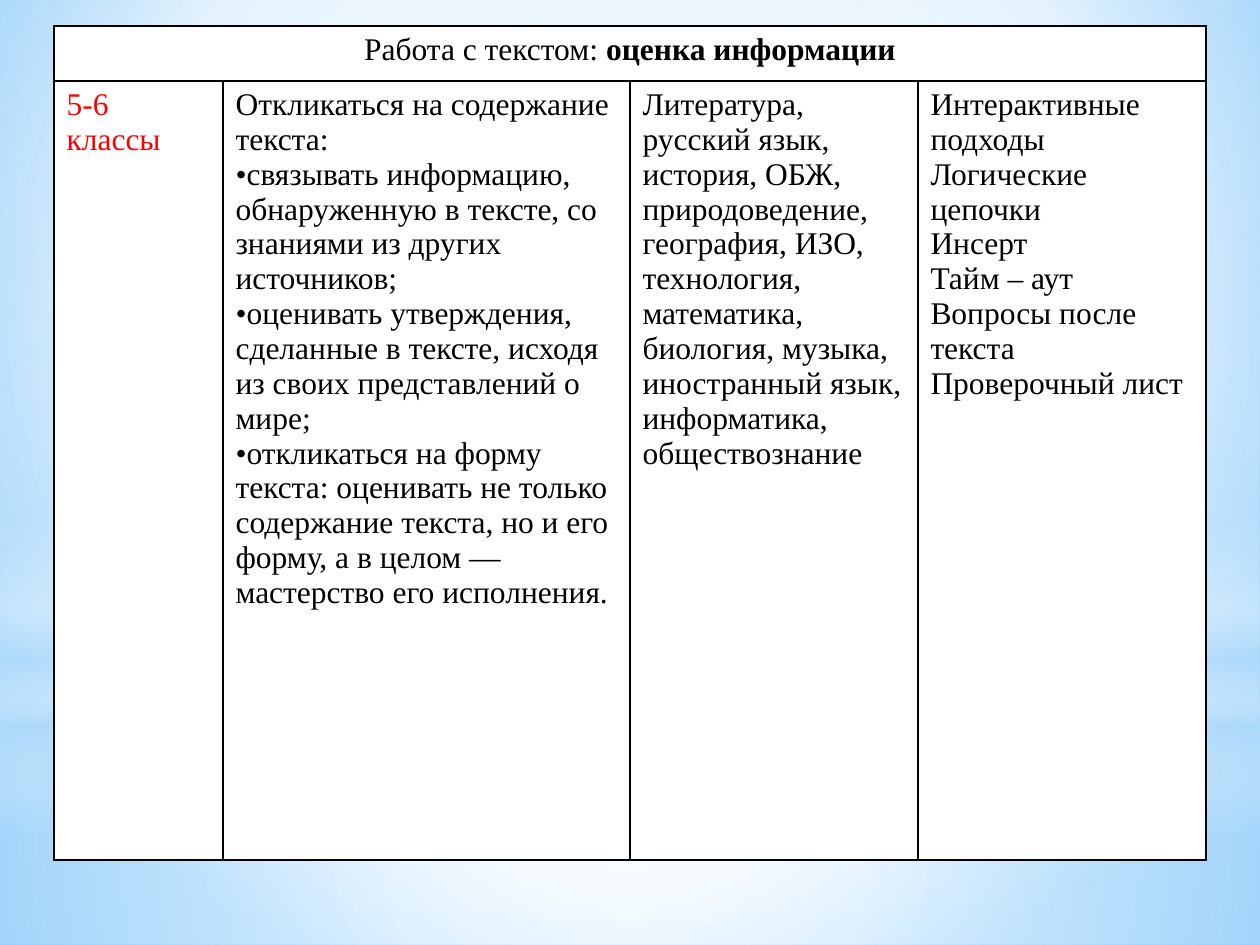
import pptx
import pptx.util
import pptx.dml.color
import pptx.enum.shapes
import pptx.enum.text
import pptx.oxml
import pptx.oxml.ns

PX = 914400 / 126
FONT = "Times New Roman"
RECT = pptx.enum.shapes.MSO_SHAPE.RECTANGLE
OVAL = pptx.enum.shapes.MSO_SHAPE.OVAL
CENTER = pptx.enum.text.PP_ALIGN.CENTER
CENTRE_FOCUS = (50, 50, 50, 50)

BACKGROUND = [(0, "9ED5FF", 100), (60, "FFFFFF", 100), (100, "5BB9FF", 100)]
GLOWS = [
    (RECT, (0, 703, 1260, 242), CENTRE_FOCUS,
     [(0, "FFFFFF", 91), (37, "FFFFFF", 76), (100, "B4DCFA", 79)]),
    (RECT, (0, 0, 1260, 703), CENTRE_FOCUS,
     [(0, "FFFFFF", 89), (48, "FFFFFF", 62), (100, "B4DCFA", 79)]),
    (RECT, (0, 519, 1260, 315), None,
     [(0, "FFFFFF", 0), (29, "FFFFFF", 30), (45, "B4DCFA", 40),
      (55, "FFFFFF", 26), (65, "B4DCFA", 60), (100, "FFFFFF", 0)]),
    (OVAL, (0, 221, 1260, 703), CENTRE_FOCUS,
     [(0, "FFFFFF", 100), (56, "FFFFFF", 0)]),
]

COLUMNS = [169, 407, 288, 288]
ROWS = [55, 779]
GRADE = ["5-6 классы"]
SKILLS = [
    "Откликаться на содержание текста:",
    "•связывать информацию, обнаруженную в тексте, со знаниями из других источников;",
    "•оценивать утверждения, сделанные в тексте, исходя из своих представлений о мире;",
    "•откликаться на форму текста: оценивать не только содержание текста, "
    "но и его форму, а в целом — мастерство его исполнения.",
]
SUBJECTS = [
    "Литература, русский язык, история, ОБЖ, природоведение, география, ИЗО, "
    "технология, математика, биология, музыка, иностранный язык, информатика, "
    "обществознание",
]
METHODS = ["Интерактивные подходы", "Логические цепочки", "Инсерт",
           "Тайм – аут", "Вопросы после текста", "Проверочный лист"]


def px(n):
    return pptx.util.Emu(round(n * PX))


def rgb(value):
    return pptx.dml.color.RGBColor.from_string(value)


def xml(tag, body):
    ns = pptx.oxml.ns.nsdecls("a")
    return pptx.oxml.parse_xml(f"<a:{tag} {ns}>{body}</a:{tag}>")


def set_gradient(fill, owner, stops, focus):
    fill.gradient()
    grad = owner.xpath(".//a:gradFill")[0]
    for child in list(grad):
        grad.remove(child)
    items = "".join(
        f'<a:gs pos="{pos * 1000}"><a:srgbClr val="{color}">'
        f'<a:alpha val="{alpha * 1000}"/></a:srgbClr></a:gs>'
        for pos, color, alpha in stops)
    grad.append(xml("gsLst", items))
    if focus:
        l, t, r, b = (n * 1000 for n in focus)
        path = pptx.oxml.parse_xml(
            f'<a:path {pptx.oxml.ns.nsdecls("a")} path="circle">'
            f'<a:fillToRect l="{l}" t="{t}" r="{r}" b="{b}"/></a:path>')
        grad.append(path)
    else:
        lin = xml("lin", "")
        lin.set("ang", "5400000")
        grad.append(lin)


def add_glow(s, kind, box, focus, stops):
    sp = s.shapes.add_shape(kind, *map(px, box))
    sp.shadow.inherit = False
    sp.line.fill.background()
    set_gradient(sp.fill, sp._element, stops, focus)


def add_text(p, text, color="000000", bold=False, size=18):
    r = p.add_run()
    r.text = text
    r.font.name = FONT
    r.font.size = pptx.util.Pt(size)
    r.font.bold = bold
    r.font.color.rgb = rgb(color)


def fill_cell(cell, lines, **fmt):
    tf = cell.text_frame
    for i, line in enumerate(lines):
        p = tf.add_paragraph() if i else tf.paragraphs[0]
        add_text(p, line, **fmt)


def style_cell(cell):
    tcPr = cell._tc.get_or_add_tcPr()
    for side in ("lnL", "lnR", "lnT", "lnB"):
        ln = xml(side, '<a:solidFill><a:srgbClr val="000000"/></a:solidFill>')
        ln.set("w", str(pptx.util.Pt(1)))
        tcPr.append(ln)
    cell.fill.solid()
    cell.fill.fore_color.rgb = rgb("FFFFFF")


def add_grid(s, left, top):
    frame = s.shapes.add_table(len(ROWS), len(COLUMNS), px(left), px(top),
                               px(sum(COLUMNS)), px(sum(ROWS)))
    table = frame.table
    for column, width in zip(table.columns, COLUMNS):
        column.width = px(width)
    for row, height in zip(table.rows, ROWS):
        row.height = px(height)
    for cell in table.iter_cells():
        style_cell(cell)
    table.cell(0, 0).merge(table.cell(0, len(COLUMNS) - 1))
    return table


def main():
    prs = pptx.Presentation()
    prs.slide_width, prs.slide_height = px(1260), px(945)
    s = prs.slides.add_slide(prs.slide_layouts[6])
    set_gradient(s.background.fill, s._element, BACKGROUND, (20, 10, 20, 60))
    for glow in GLOWS:
        add_glow(s, *glow)

    table = add_grid(s, 54, 26)
    p = table.cell(0, 0).text_frame.paragraphs[0]
    p.alignment = CENTER
    add_text(p, "Работа с текстом:")
    add_text(p, " оценка информации", bold=True)
    fill_cell(table.cell(1, 0), GRADE, color="FF0000")
    for i, lines in enumerate((SKILLS, SUBJECTS, METHODS), 1):
        fill_cell(table.cell(1, i), lines)
    prs.save("out.pptx")


if __name__ == "__main__":
    main()
